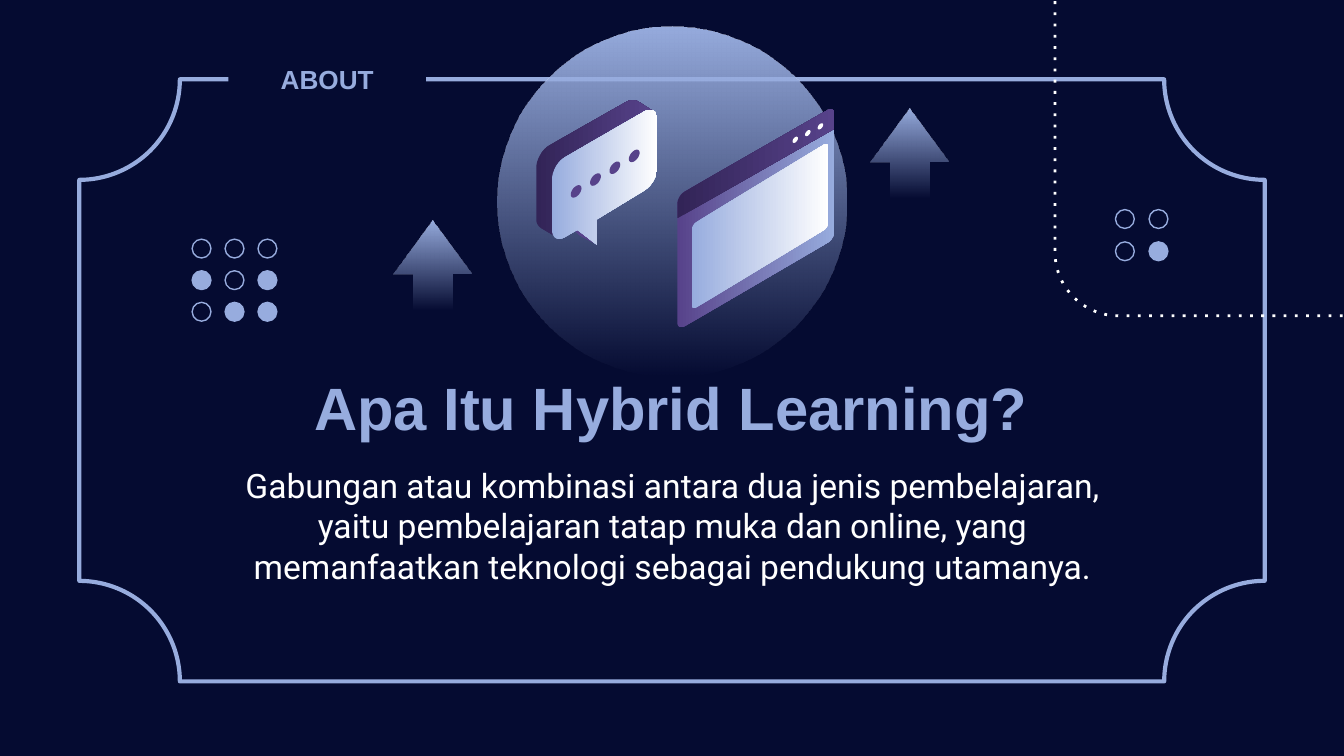
import dataclasses

import lxml.etree
import pptx
import pptx.dml.color
import pptx.enum.shapes
import pptx.enum.text
import pptx.oxml.ns
import pptx.util

SHAPE = pptx.enum.shapes.MSO_SHAPE
ANCHOR = pptx.enum.text.MSO_ANCHOR
COLUMNS, ROWS = 100, 56.25
UNIT = pptx.util.Inches(0.1)


@dataclasses.dataclass(frozen=True)
class Theme:
    navy: str = "050B31"
    periwinkle: str = "97ACDE"
    violet: str = "57428A"
    plum: str = "322457"
    white: str = "FFFFFF"
    heading_font: str = "Arial"
    body_font: str = "Roboto"
    title_size: int = 32
    body_size: int = 18
    label_size: int = 14


THEME = Theme()


@dataclasses.dataclass(frozen=True)
class Box:
    column: float
    row: float
    columns: float
    rows: float

    def frame(self):
        return [round(value * UNIT) for value in (self.column, self.row, self.columns, self.rows)]

    def point(self, across, down):
        return self.column + across * self.columns, self.row + down * self.rows


def rgb(value):
    return pptx.dml.color.RGBColor.from_string(value)


def paint(shape, fill=None, line=None, width=0.75):
    shape.shadow.inherit = False
    if fill:
        shape.fill.solid()
        shape.fill.fore_color.rgb = rgb(fill)
    else:
        shape.fill.background()
    if line:
        shape.line.color.rgb = rgb(line)
        shape.line.width = pptx.util.Pt(width)
    else:
        shape.line.fill.background()


def paint_gradient(shape, start, end, angle=0, fade=False):
    paint(shape)
    shape.fill.gradient()
    shape.fill.gradient_angle = angle
    for stop, color, position in zip(shape.fill.gradient_stops, (start, end), (0, 1)):
        stop.color.rgb = rgb(color)
        stop.position = position
    if fade:
        colors = shape._element.spPr.findall(".//" + pptx.oxml.ns.qn("a:srgbClr"))
        lxml.etree.SubElement(colors[-1], pptx.oxml.ns.qn("a:alpha"), val="0")


def write(shape, text, size, color, font, bold=False, anchor=ANCHOR.TOP):
    text_frame = shape.text_frame
    text_frame.word_wrap = True
    text_frame.vertical_anchor = anchor
    for side in ("left", "top", "right", "bottom"):
        setattr(text_frame, "margin_" + side, pptx.util.Inches(0.1))
    paragraph = text_frame.paragraphs[0]
    paragraph.alignment = pptx.enum.text.PP_ALIGN.CENTER
    run = paragraph.add_run()
    run.text = text
    run.font.size = pptx.util.Pt(size)
    run.font.name = font
    run.font.bold = bold
    run.font.color.rgb = rgb(color)


def rounded_outline(shapes, corners):
    points = []
    for index, (x, y, radius) in enumerate(corners):
        ends = []
        for other_x, other_y, _ in (corners[index - 1], corners[(index + 1) % len(corners)]):
            length = ((other_x - x) ** 2 + (other_y - y) ** 2) ** 0.5
            share = radius / length
            ends.append((x + (other_x - x) * share, y + (other_y - y) * share))
        curve = (ends[0], (x, y), ends[1])
        steps = 8 if radius else 0
        for step in range(steps + 1):
            t = step / max(steps, 1)
            weights = ((1 - t) ** 2, 2 ** 0.5 * t * (1 - t), t ** 2)
            points.append(tuple(
                round(UNIT * sum(weight * point[axis] for weight, point in zip(weights, curve))
                      / sum(weights))
                for axis in (0, 1)))
    builder = shapes.build_freeform(*points[0])
    builder.add_line_segments(points[1:], close=True)
    return builder.convert_to_shape()


def panel(shapes, box, corners, radii):
    return rounded_outline(
        shapes, [(*box.point(*corner), radius) for corner, radius in zip(corners, radii)])


def slanted_dots(shapes, box, first, step, count, radius, color):
    slope = 0.58
    edge = radius * (1 + slope ** 2) ** 0.5
    for index in range(count):
        x, y = box.point(first[0] + index * step[0], first[1] + index * step[1])
        corners = [(x + side * radius, y + (end - side * slope) * radius, cut)
                   for side, end, cut in ((1, -1, 0), (-1, -1, 0), (-1, 1, 0), (1, 1, 0))]
        middles = []
        for number, (corner_x, corner_y, _) in enumerate(corners):
            next_x, next_y, _ = corners[(number + 1) % 4]
            middles.append(((corner_x + next_x) / 2, (corner_y + next_y) / 2))
        points = []
        for number, (corner_x, corner_y, _) in enumerate(corners):
            curve = (middles[number - 1], (corner_x, corner_y), middles[number])
            for part in range(8):
                t = part / 8
                weights = ((1 - t) ** 2, 2 ** 0.5 * t * (1 - t), t ** 2)
                points.append(tuple(
                    sum(weight * point[axis] for weight, point in zip(weights, curve))
                    / sum(weights) for axis in (0, 1)) + (0,))
        paint(rounded_outline(shapes, points), color)


def draw_frame(slide, box):
    plaque = slide.shapes.add_shape(SHAPE.PLAQUE, *box.frame())
    plaque.adjustments[0] = 0.167
    paint(plaque, line=THEME.periwinkle, width=2.25)


def draw_glow(slide, box):
    circle = slide.shapes.add_shape(SHAPE.OVAL, *box.frame())
    paint_gradient(circle, THEME.periwinkle, THEME.periwinkle, 270, fade=True)


def draw_title(slide, box):
    write(slide.shapes.add_textbox(*box.frame()), "Apa Itu Hybrid Learning?",
          THEME.title_size, THEME.periwinkle, THEME.heading_font, bold=True)


def draw_body(slide, box):
    write(slide.shapes.add_textbox(*box.frame()),
          "Gabungan atau kombinasi antara dua jenis pembelajaran, yaitu pembelajaran tatap muka "
          "dan online, yang memanfaatkan teknologi sebagai pendukung utamanya.",
          THEME.body_size, THEME.white, THEME.body_font)


def draw_label(slide, box):
    label = slide.shapes.add_shape(SHAPE.RECTANGLE, *box.frame())
    paint(label, THEME.navy)
    write(label, "ABOUT", THEME.label_size, THEME.periwinkle, THEME.heading_font,
          bold=True, anchor=ANCHOR.MIDDLE)


def draw_window(slide, box):
    shapes = slide.shapes.add_group_shape().shapes
    frame = panel(shapes, box, [(1, 0), (0, 0.4), (0, 1), (1, 0.59)], [0.6] * 4)
    paint_gradient(frame, THEME.violet, THEME.periwinkle)
    header = panel(shapes, box, [(1, 0), (0, 0.4), (0, 0.5), (1, 0.1)], [0.6, 0.6, 0, 0])
    paint_gradient(header, THEME.plum, THEME.violet)
    slanted_dots(shapes, box, (0.91, 0.09), (-0.08, 0.03), 3, 0.2, THEME.white)
    screen = panel(shapes, box, [(0.96, 0.16), (0.09, 0.53), (0.09, 0.91), (0.96, 0.54)], [0.4] * 4)
    paint_gradient(screen, THEME.periwinkle, THEME.white)


def draw_chat_bubble(slide, box):
    shapes = slide.shapes.add_group_shape().shapes
    tail = panel(shapes, box, [(0.21, 0.83), (0.36, 0.94), (0.5, 1), (0.34, 0.9)], [0] * 4)
    paint(tail, THEME.violet)
    side = panel(shapes, box,
                 [(0.8, 0.01), (0.97, 0.1), (0.89, 0.1), (0.13, 0.46),
                  (0.14, 0.89), (0.17, 0.95), (0, 0.87), (0, 0.38)],
                 [0.5, 0, 0, 1.1, 0, 0, 0.4, 1.1])
    paint_gradient(side, THEME.plum, THEME.violet)
    front = panel(shapes, box,
                  [(1, 0.05), (0.13, 0.46), (0.13, 1), (0.34, 0.9), (0.5, 1), (0.5, 0.83), (1, 0.58)],
                  [1.1, 1.1, 1.1, 0, 0, 0, 1.1])
    paint_gradient(front, THEME.periwinkle, THEME.white)
    slanted_dots(shapes, box, (0.33, 0.64), (0.16, -0.08), 4, 0.4, THEME.violet)


def draw_arrow(slide, box):
    arrow = slide.shapes.add_shape(SHAPE.UP_ARROW, *box.frame())
    arrow.adjustments[0] = 0.5
    arrow.adjustments[1] = 0.679
    paint_gradient(arrow, THEME.periwinkle, THEME.periwinkle, 270, fade=True)


def draw_dotted_corner(slide, box):
    corner = slide.shapes.add_shape(SHAPE.ROUNDED_RECTANGLE, *box.frame())
    corner.adjustments[0] = 0.167
    paint(corner, line=THEME.white, width=1.5)
    lxml.etree.SubElement(corner.line._ln, pptx.oxml.ns.qn("a:prstDash"), val="dot")


def draw_rings(slide, box, pattern, size=1.4):
    shapes = slide.shapes.add_group_shape().shapes
    gaps = len(pattern) - 1
    for row, marks in enumerate(pattern):
        for column, mark in enumerate(marks):
            place = Box(box.column + column * (box.columns - size) / gaps,
                        box.row + row * (box.rows - size) / gaps, size, size)
            ring = shapes.add_shape(SHAPE.OVAL, *place.frame())
            paint(ring, THEME.periwinkle if mark == "x" else None, THEME.periwinkle)


def main():
    presentation = pptx.Presentation()
    presentation.slide_width = round(COLUMNS * UNIT)
    presentation.slide_height = round(ROWS * UNIT)
    slide = presentation.slides.add_slide(presentation.slide_layouts[6])
    slide.background.fill.solid()
    slide.background.fill.fore_color.rgb = rgb(THEME.navy)
    draw_frame(slide, Box(5.9, 5.9, 88.2, 44.8))
    draw_glow(slide, Box(37, 2, 26, 26))
    draw_title(slide, Box(16.9, 26.6, 66.1, 9.1))
    draw_body(slide, Box(17, 33.6, 66.1, 14.1))
    draw_label(slide, Box(17, 3.7, 14.7, 4.4))
    draw_window(slide, Box(50.4, 7.9, 11.7, 16.7))
    draw_chat_bubble(slide, Box(39.9, 7.2, 9, 11))
    for column, row in ((64.8, 8.1), (29.3, 16.4)):
        draw_arrow(slide, Box(column, row, 5.8, 6.6))
    draw_dotted_corner(slide, Box(78.5, -6.1, 28.3, 29.6))
    draw_rings(slide, Box(14.3, 17.8, 6.3, 6.1), ("ooo", "xox", "oxx"))
    draw_rings(slide, Box(83, 15.6, 3.9, 3.8), ("oo", "ox"))
    presentation.save("out.pptx")


if __name__ == "__main__":
    main()
